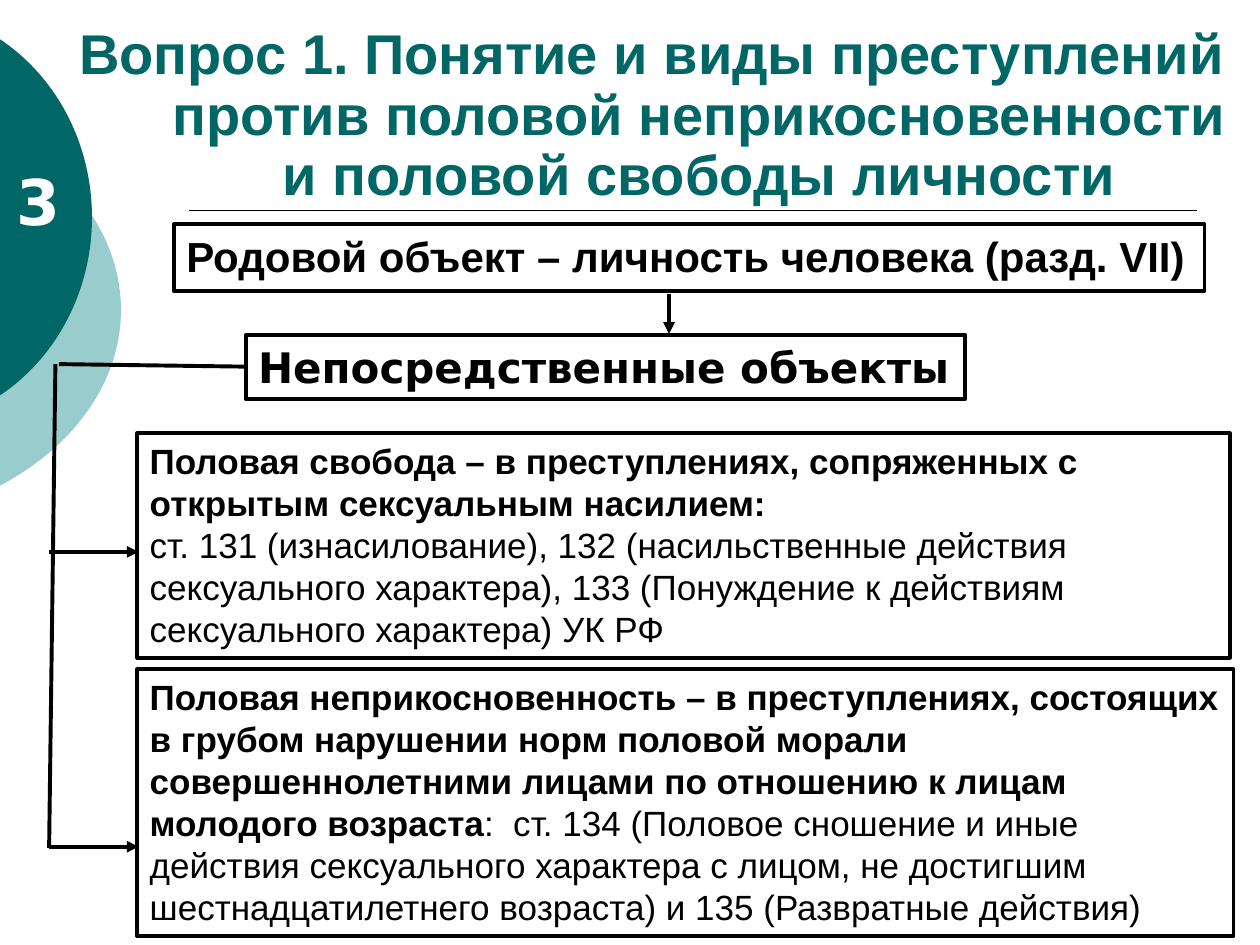
import pptx
import pptx.dml.color
import pptx.enum.shapes
import pptx.enum.text
import pptx.oxml
import pptx.oxml.ns
import pptx.util

Inches = pptx.util.Inches
Pt = pptx.util.Pt
ANCHOR = pptx.enum.text.MSO_ANCHOR
ALIGN = pptx.enum.text.PP_ALIGN
NAMESPACE = pptx.oxml.ns.nsdecls("a")

COLORS = {"dark": "006666", "light": "99CCCC", "ink": "000000", "paper": "FFFFFF"}


def color(name):
    return pptx.dml.color.RGBColor.from_string(COLORS[name])


def write_text(box, paragraphs, size=20, font="Arial", ink="ink", wrap=True,
               align=ALIGN.LEFT, anchor=ANCHOR.TOP, spacing=None, hanging=None):
    """Each paragraph is a list of (text, bold) pairs."""
    frame = box.text_frame
    frame.word_wrap = wrap
    frame.vertical_anchor = anchor
    for index, spans in enumerate(paragraphs):
        para = frame.add_paragraph() if index else frame.paragraphs[0]
        para.alignment = align
        if spacing:
            para.line_spacing = spacing
        if hanging:
            properties = para._p.get_or_add_pPr()
            properties.set("marL", str(Inches(hanging)))
            properties.set("indent", str(-Inches(hanging)))
        for text, bold in spans:
            span = para.add_run()
            span.text = text
            span.font.size = Pt(size)
            span.font.name = font
            span.font.bold = bold
            span.font.color.rgb = color(ink)


def add_text(page, left, top, width, height, paragraphs, **style):
    box = page.shapes.add_textbox(*map(Inches, (left, top, width, height)))
    write_text(box, paragraphs, **style)


def add_frame(page, left, top, width, height, paragraphs, **style):
    box = page.shapes.add_shape(pptx.enum.shapes.MSO_SHAPE.RECTANGLE,
                                *map(Inches, (left, top, width, height)))
    box.shadow.inherit = False
    box.fill.background()
    box.line.color.rgb = color("ink")
    box.line.width = Pt(2.25)
    write_text(box, paragraphs, **style)


def add_line(page, start, end, width=2.25, arrow=False):
    line = page.shapes.add_connector(pptx.enum.shapes.MSO_CONNECTOR.STRAIGHT,
                                     *map(Inches, start + end))
    line.line.color.rgb = color("ink")
    line.line.width = Pt(width)
    if arrow:
        tail = pptx.oxml.parse_xml(f'<a:tailEnd {NAMESPACE} type="triangle"/>')
        line.line._get_or_add_ln().append(tail)
    line._element.spPr.append(pptx.oxml.parse_xml(f'<a:effectLst {NAMESPACE}/>'))


def add_edge_disc(page, left, top, width, height, fill, chord, bend, pull):
    """Draw the cap of an ellipse right of the page edge.

    chord is half the cut's height; bend and pull place the curve handles.
    """
    corners = [(left + width, top), (left + width, top + height), (left, top + height)]
    builder = page.shapes.build_freeform(Inches(left), Inches(top))
    builder.add_line_segments([tuple(map(Inches, corner)) for corner in corners])
    disc = builder.convert_to_shape()

    def curve(*points):
        return "".join(f'<a:pt x="{Inches(x)}" y="{Inches(height / 2 + y)}"/>'
                       for x, y in points)

    edge = -0.01 - left
    handle_x, handle_y = bend
    upper = curve((edge + handle_x, -handle_y), (width, -pull), (width, 0))
    lower = curve((width, pull), (edge + handle_x, handle_y), (edge, chord))
    outline = pptx.oxml.parse_xml(
        f'<a:pathLst {NAMESPACE}><a:path w="{Inches(width)}" h="{Inches(height)}">'
        f'<a:moveTo>{curve((edge, -chord))}</a:moveTo>'
        f'<a:cubicBezTo>{upper}</a:cubicBezTo><a:cubicBezTo>{lower}</a:cubicBezTo>'
        '<a:close/></a:path></a:pathLst>')
    old = disc._element.spPr.find(".//" + pptx.oxml.ns.qn("a:pathLst"))
    old.getparent().replace(old, outline)

    disc.shadow.inherit = False
    disc.fill.solid()
    disc.fill.fore_color.rgb = color(fill)
    disc.line.fill.background()


def add_decoration(page):
    add_edge_disc(page, -3.54, 0.75, 4.5, 3.42, "light",
                  chord=1.4, bend=(0.61, 1.08), pull=0.56)
    add_edge_disc(page, -2.65, 0, 3.38, 3.45, "dark",
                  chord=1.42, bend=(0.47, 1.11), pull=0.57)
    add_line(page, (1.5, 1.67), (9.5, 1.67), width=1)


def add_heading(page, left, top, width, height):
    title = ("Вопрос 1. Понятие и виды преступлений против половой "
             "неприкосновенности и половой свободы личности")
    add_text(page, left, top, width, height, [[(title, True)]], size=32, ink="dark",
             align=ALIGN.CENTER, anchor=ANCHOR.BOTTOM, spacing=0.9, hanging=0.75)
    # Question number on the dark disc
    add_text(page, left - 0.44, top + 0.79, 0.56, 0.7, [[("3", True)]],
             size=36, font="DejaVu Sans", ink="paper")


def add_top_objects(page, left, top):
    """General object above, direct objects below, joined by an arrow."""
    add_frame(page, left, top, 8.18, 0.53,
              [[("Родовой объект – личность человека (разд. VII)", True)]],
              size=24, wrap=False)
    add_frame(page, left + 0.57, top + 0.88, 5.71, 0.51,
              [[("Непосредственные объекты", True)]],
              size=24, font="DejaVu Sans", wrap=False)
    add_line(page, (left + 3.93, top + 0.55), (left + 3.93, top + 0.87), arrow=True)


def add_direct_objects(page, left, top):
    freedom = [
        [("Половая свобода – в преступлениях, сопряженных с открытым "
          "сексуальным насилием:", True)],
        [("ст. 131 (изнасилование), 132 (насильственные действия сексуального "
          "характера), 133 (Понуждение к действиям сексуального характера) УК РФ",
          False)],
    ]
    integrity = [[
        ("Половая неприкосновенность – в преступлениях, состоящих в грубом "
         "нарушении норм половой морали совершеннолетними лицами по отношению "
         "к лицам молодого возраста", True),
        (":  ст. 134 (Половое сношение и иные действия сексуального характера "
         "с лицом, не достигшим шестнадцатилетнего возраста) и 135 "
         "(Развратные действия)", False),
    ]]
    add_frame(page, left, top, 8.67, 1.78, freedom)
    add_frame(page, left, top + 1.87, 8.7, 2.12, integrity)

    # Branch from the direct objects to both frames
    trunk = left - 0.7
    add_line(page, (trunk + 0.05, top - 0.55), (trunk, top + 3.29))
    for drop in (3.28, 0.94):
        add_line(page, (trunk, top + drop), (left + 0.01, top + drop), arrow=True)
    add_line(page, (trunk + 0.08, top - 0.55), (left + 0.86, top - 0.53))


def main():
    deck = pptx.Presentation()
    deck.slide_width, deck.slide_height = Inches(10), Inches(7.5)
    page = deck.slides.add_slide(deck.slide_layouts[6])
    add_decoration(page)
    add_heading(page, 0.47, 0.45, 9.41, 1.25)
    add_top_objects(page, 1.38, 1.78)
    add_direct_objects(page, 1.09, 3.44)
    deck.save("out.pptx")


if __name__ == "__main__":
    main()
